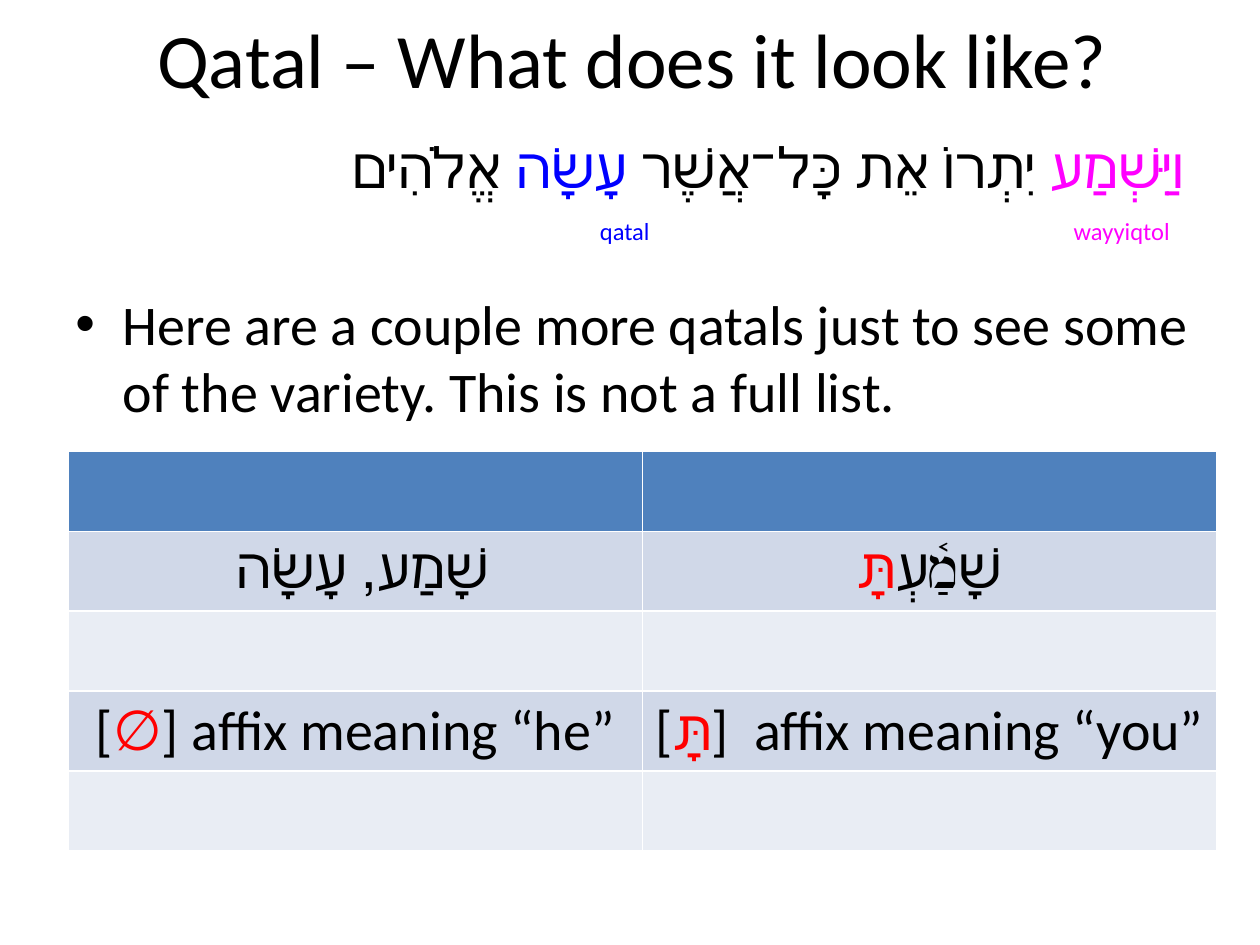
from pptx import Presentation
from pptx.dml.color import RGBColor
from pptx.enum.text import MSO_ANCHOR, PP_ALIGN
from pptx.util import Pt
from lxml.etree import SubElement
from pptx.oxml.ns import qn

BLACK, RED, BLUE, MAGENTA = "000000", "FF0000", "0000FF", "FF00FF"
HEADER_FILL, BAND_FILLS = "4F81BD", ("D0D8E8", "E9EDF4")
ROW_HEIGHT, COLUMN_WIDTH = 45.6, 328.3
TABLE_ROWS = [
    [[], []],
    [[("שָׁמַע, עָשָׂה ", BLACK)], [("שָׁמַ֫עְ", BLACK), ("תָּ", RED)]],
    [[], []],
    [
        [("[", BLACK), ("∅", RED), ("] affix meaning “he”", BLACK)],
        [("[", BLACK), ("תָּ", RED), ("]  affix meaning “you”", BLACK)],
    ],
    [[], []],
]
HEBREW_ROW = 1


def color(hex_string):
    """Turn a hex string into a colour."""
    return RGBColor.from_string(hex_string)


def write_runs(paragraph, runs, size, alignment, right_to_left=False):
    """Fill a paragraph with (text, colour) runs."""
    paragraph.alignment = alignment
    paragraph.font.size = Pt(size)
    paragraph.font.name = "Calibri"
    if right_to_left:
        paragraph._p.get_or_add_pPr().set("rtl", "1")
    for text, hex_string in runs:
        run = paragraph.add_run()
        run.text = text
        run.font.color.rgb = color(hex_string)


def add_text(slide, box, runs, size, alignment=PP_ALIGN.CENTER,
             anchor=MSO_ANCHOR.TOP, wrap=True, right_to_left=False):
    """Add a one-paragraph text box and return its paragraph."""
    frame = slide.shapes.add_textbox(*map(Pt, box)).text_frame
    frame.word_wrap = wrap
    frame.vertical_anchor = anchor
    paragraph = frame.paragraphs[0]
    write_runs(paragraph, runs, size, alignment, right_to_left)
    return paragraph


def add_bullet(paragraph, indent):
    """Give a paragraph a round bullet with a hanging indent."""
    properties = paragraph._p.get_or_add_pPr()
    properties.set("marL", str(Pt(indent)))
    properties.set("indent", str(-Pt(indent)))
    font = SubElement(properties, qn("a:buFont"))
    font.set("typeface", "Arial")
    bullet = SubElement(properties, qn("a:buChar"))
    bullet.set("char", "•")
    properties.append(properties.find(qn("a:defRPr")))


def add_affix_table(slide, left, top):
    """Add the banded table of qatal forms and their affixes."""
    row_count, column_count = len(TABLE_ROWS), len(TABLE_ROWS[0])
    table = slide.shapes.add_table(
        row_count, column_count, Pt(left), Pt(top),
        Pt(COLUMN_WIDTH * column_count), Pt(ROW_HEIGHT * row_count)).table
    for row_index, row in enumerate(TABLE_ROWS):
        table.rows[row_index].height = Pt(ROW_HEIGHT)
        fill = BAND_FILLS[(row_index - 1) % 2] if row_index else HEADER_FILL
        for column_index, runs in enumerate(row):
            cell = table.cell(row_index, column_index)
            cell.fill.solid()
            cell.fill.fore_color.rgb = color(fill)
            cell.vertical_anchor = MSO_ANCHOR.MIDDLE
            if runs:
                write_runs(cell.text_frame.paragraphs[0], runs, 32,
                           PP_ALIGN.CENTER, row_index == HEBREW_ROW)


def main():
    """Build the slide and save it."""
    presentation = Presentation()
    presentation.slide_width, presentation.slide_height = Pt(720), Pt(540)
    slide = presentation.slides.add_slide(presentation.slide_layouts[6])
    add_text(slide, (37.5, 0, 648, 66),
             [("Qatal – What does it look like?", BLACK)], 44,
             anchor=MSO_ANCHOR.MIDDLE)
    statement = add_text(
        slide, (36, 162, 672, 90),
        [("Here are a couple more qatals just to see some of the variety. "
          "This is not a full list.", BLACK)], 32, PP_ALIGN.LEFT)
    add_bullet(statement, 27)
    verse = [("וַיִּשְׁמַע", MAGENTA), (" יִתְרוֹ אֵת כָּל־אֲשֶׁר ", BLACK),
             ("עָשָׂה", BLUE), (" אֱלֹהִים", BLACK)]
    add_text(slide, (30, 72, 654, 53), verse, 32, PP_ALIGN.RIGHT,
             right_to_left=True)
    for label, left, width, hex_string in (
            ("wayyiqtol", 606, 70, MAGENTA), ("qatal", 335.5, 43, BLUE)):
        add_text(slide, (left, 120, width, 24.5), [(label, hex_string)], 14,
                 wrap=False)
    add_affix_table(slide, 39, 258)
    presentation.save("out.pptx")


if __name__ == "__main__":
    main()
